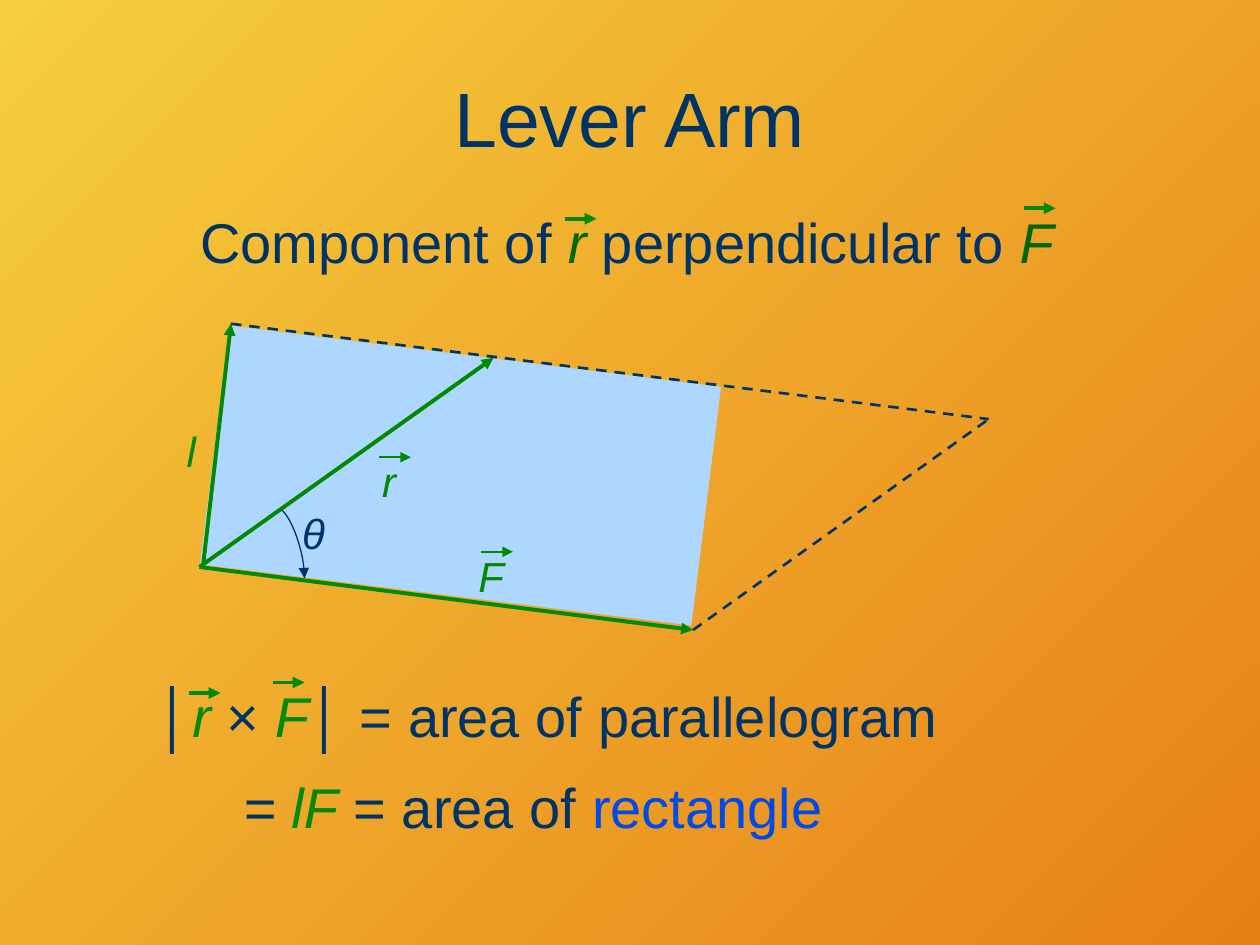
import lxml.etree
import pptx
import pptx.dml.color
import pptx.enum.dml
import pptx.enum.shapes
import pptx.enum.text
import pptx.oxml.ns
import pptx.util

Pt = pptx.util.Pt
ALIGN = pptx.enum.text.PP_ALIGN
COLORS = {
    "yellow": "F5CE3D", "orange": "E88018", "navy": "003366", "navy2": "003466",
    "green": "008901", "dark_green": "006600", "sky": "ADD7FF", "blue": "004AE7",
}


def color(name):
    return pptx.dml.color.RGBColor.from_string(COLORS[name])


class SlideBuilder:
    def __init__(self, slide, font="Arial"):
        self.slide = slide
        self.font = font

    def background(self, start, end):
        fill = self.slide.background.fill
        fill.gradient()
        fill.gradient_angle = 315
        for stop, name, position in zip(fill.gradient_stops, (start, end), (0, 1)):
            stop.color.rgb = color(name)
            stop.position = position

    def style_line(self, shape, name, width, arrow=False, dashed=False):
        shape.line.color.rgb = color(name)
        shape.line.width = Pt(width)
        if dashed:
            shape.line.dash_style = pptx.enum.dml.MSO_LINE.DASH
        if arrow:
            outline = shape.line._get_or_add_ln()
            lxml.etree.SubElement(outline, pptx.oxml.ns.qn("a:tailEnd"), type="triangle")

    def rectangle(self, left, top, width, height, fill, rotation):
        shape = self.slide.shapes.add_shape(
            pptx.enum.shapes.MSO_SHAPE.RECTANGLE, Pt(left), Pt(top), Pt(width), Pt(height))
        shape.shadow.inherit = False
        shape.fill.solid()
        shape.fill.fore_color.rgb = color(fill)
        shape.line.fill.background()
        shape.rotation = rotation

    def line(self, start, end, name="green", width=2.25, arrow=True, dashed=False):
        connector = self.slide.shapes.add_connector(
            pptx.enum.shapes.MSO_CONNECTOR.STRAIGHT, *(Pt(v) for v in (*start, *end)))
        self.style_line(connector, name, width, arrow, dashed)
        lxml.etree.SubElement(connector._element.spPr, pptx.oxml.ns.qn("a:effectLst"))

    def vector_mark(self, left, top, width=2.25):
        self.line((left, top), (left + 18, top), width=width)

    def curve(self, controls, name, width, steps=16):
        """Draw a cubic Bezier curve as a fine polyline with an arrowhead."""
        points = []
        for step in range(steps + 1):
            t = step / steps
            weights = ((1 - t) ** 3, 3 * t * (1 - t) ** 2, 3 * t * t * (1 - t), t ** 3)
            points.append(tuple(
                Pt(sum(w * c[axis] for w, c in zip(weights, controls))) for axis in (0, 1)))
        builder = self.slide.shapes.build_freeform(*points[0])
        builder.add_line_segments(points[1:], close=False)
        shape = builder.convert_to_shape()
        shape.shadow.inherit = False
        shape.fill.background()
        self.style_line(shape, name, width, arrow=True)

    def text(self, left, top, width, height, runs, size=32, align=ALIGN.LEFT,
             wrap=True, middle=False, hanging=0):
        box = self.slide.shapes.add_textbox(Pt(left), Pt(top), Pt(width), Pt(height))
        frame = box.text_frame
        frame.word_wrap = wrap
        if middle:
            frame.vertical_anchor = pptx.enum.text.MSO_ANCHOR.MIDDLE
        paragraph = frame.paragraphs[0]
        paragraph.alignment = align
        if hanging:
            properties = paragraph._p.get_or_add_pPr()
            properties.set("marL", str(Pt(hanging)))
            properties.set("indent", str(-Pt(hanging)))
        for content, name, italic in runs:
            run = paragraph.add_run()
            run.text = content
            run.font.color.rgb = color(name)
            formats = {"name": self.font, "size": Pt(size), "italic": italic}
            for attribute, value in formats.items():
                setattr(run.font, attribute, value)

    def label(self, left, top, symbol, name="green", vector=False):
        self.text(left, top, 30, 36, [(symbol, name, True)], size=24, align=ALIGN.CENTER)
        if vector:
            self.vector_mark(left + 9.4, top + 4.3, width=1)


def main():
    presentation = pptx.Presentation()
    presentation.slide_width, presentation.slide_height = Pt(720), Pt(540)
    slide = presentation.slides.add_slide(presentation.slide_layouts[6])
    builder = SlideBuilder(slide)
    builder.background("yellow", "orange")

    # Shaded rectangle
    builder.rectangle(121.7, 203, 283, 137.5, "sky", 7.1)

    # Title and statement
    builder.text(36, 21.6, 648, 90, [("Lever Arm", "navy", False)], size=44,
                 align=ALIGN.CENTER, middle=True)
    builder.text(107.2, 115.2, 505.5, 46, [
        ("Component of ", "navy", False), ("r", "dark_green", True),
        (" perpendicular to ", "navy", False), ("F", "dark_green", True)], wrap=False)

    # Vectors r, F and lever arm l
    pivot, force_tip, arm_tip = (114, 324), (396, 360), (132, 185)
    builder.line(pivot, (282, 204.5))
    builder.line(pivot, force_tip)
    builder.line((116, 323.5), arm_tip)

    # Parallelogram outline
    far_corner = (565, 239.5)
    for start in (force_tip, arm_tip):
        builder.line(start, far_corner, "navy", 1.5, arrow=False, dashed=True)

    # Angle
    builder.curve([(161, 291.5), (167, 296.5), (174, 316), (174, 330.5)], "navy", 0.75)

    # Diagram labels
    builder.label(207.4, 257, "r", vector=True)
    builder.label(265.7, 311, "F", vector=True)
    builder.label(164.2, 286.6, "θ", "navy")
    builder.label(94.3, 239.8, "l")

    # Area equations
    builder.text(82.8, 386, 600, 54, [
        ("│", "navy", False), ("r ", "green", True), ("× ", "navy", False),
        ("F", "green", True), ("│ = ", "navy", False), ("area ", "navy2", False),
        ("of parallelogram", "navy", False)], hanging=27)
    builder.text(131.8, 437.8, 366, 54, [
        ("= ", "navy2", True), ("lF", "green", True), (" = ", "navy", False),
        ("area ", "navy2", False), ("of ", "navy", False),
        ("rectangle", "blue", False)], hanging=27)

    # Vector marks over the symbols in the text
    for left, top in ((108, 396), (156, 390), (322.8, 125), (585.2, 119)):
        builder.vector_mark(left, top)

    presentation.save("out.pptx")


if __name__ == "__main__":
    main()
